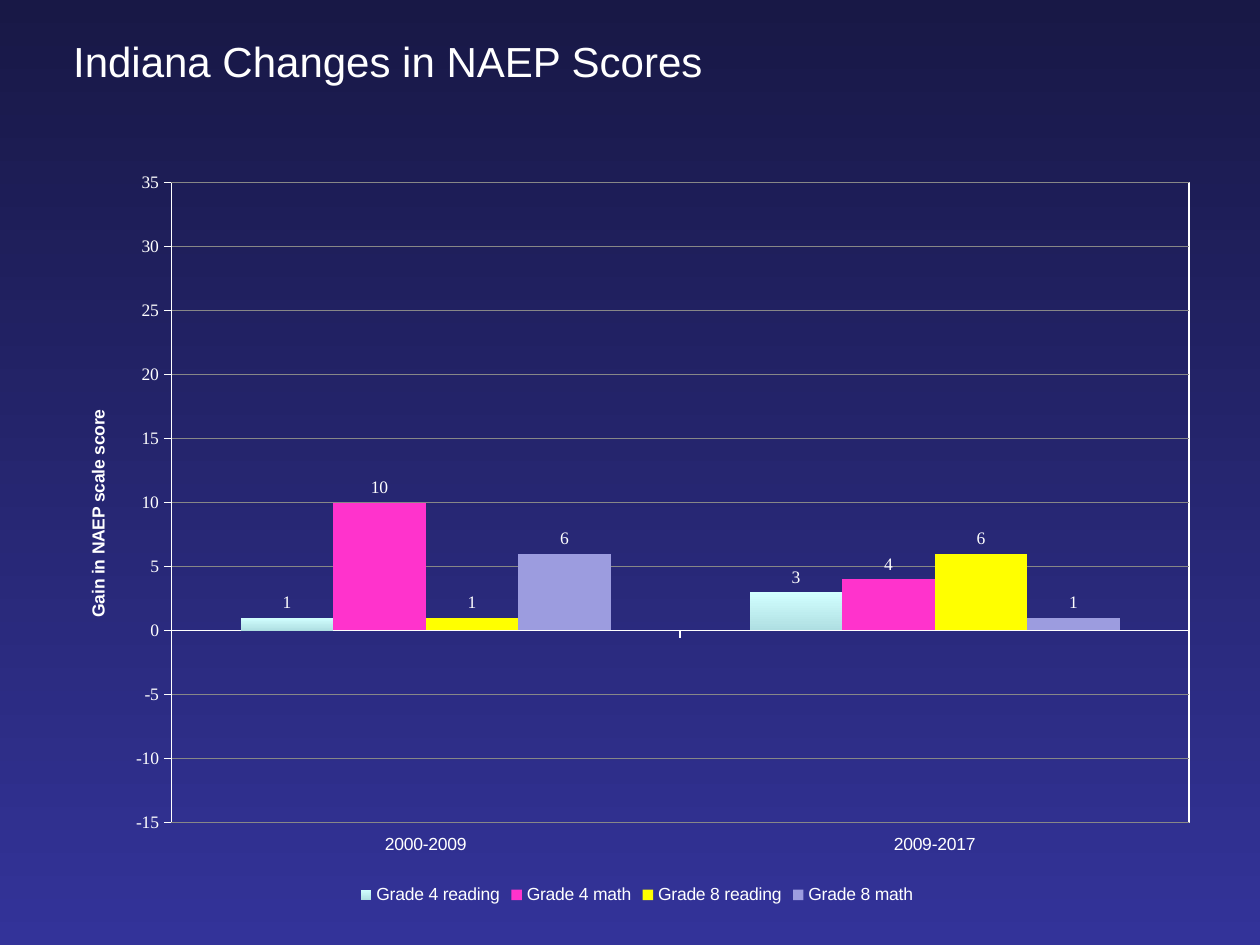
from lxml.etree import SubElement
from pptx import Presentation
from pptx.chart.data import CategoryChartData
from pptx.dml.color import RGBColor
from pptx.enum.chart import (XL_CHART_TYPE, XL_LABEL_POSITION,
                             XL_LEGEND_POSITION, XL_TICK_LABEL_POSITION,
                             XL_TICK_MARK)
from pptx.enum.text import MSO_ANCHOR, MSO_AUTO_SIZE, PP_ALIGN
from pptx.oxml import parse_xml
from pptx.oxml.ns import nsdecls, qn
from pptx.util import Cm, Pt

COLORS = {
    "sky": "181846",
    "ground": "333399",
    "text": "FFFFFF",
    "grid": "878787",
    "reading4_top": "D2FFFF",
    "reading4_bottom": "AFDFE2",
    "math4": "FF33CC",
    "reading8": "FFFF00",
    "math8": "9C9CDF",
}
PERIODS = ["2000-2009", "2009-2017"]
GAINS = [
    ("Grade 4 reading", (1, 3), ("reading4_top", "reading4_bottom")),
    ("Grade 4 math", (10, 4), ("math4",)),
    ("Grade 8 reading", (1, 6), ("reading8",)),
    ("Grade 8 math", (6, 1), ("math8",)),
]
TITLE_BOX = (Cm(1.22), Cm(0.58), Cm(13.82), Cm(1.27))
CHART_BOX = (Cm(1.22), Cm(3.2), Cm(23.24), Cm(15.14))


def rgb(name):
    return RGBColor.from_string(COLORS[name])


def apply_format(target, values):
    for attribute, value in values.items():
        setattr(target, attribute, value)


def format_font(font, name="Arial", size=10, bold=False):
    apply_format(font, {"name": name, "size": Pt(size), "bold": bold})
    font.color.rgb = rgb("text")


def format_line(line, color, width=0.75):
    line.color.rgb = rgb(color)
    line.width = Pt(width)


def format_fill(fill, names):
    if len(names) == 1:
        fill.solid()
        fill.fore_color.rgb = rgb(names[0])
        return
    fill.gradient()
    fill.gradient_angle = 270
    for stop, name, position in zip(fill.gradient_stops, names, (0, 1)):
        stop.color.rgb = rgb(name)
        stop.position = position


def set_layout(element, **fractions):
    layout = element.find(qn("c:layout"))
    if layout is None:
        layout = parse_xml(f"<c:layout {nsdecls('c')}/>")
        first = element[0]
        if first.tag in (qn("c:tx"), qn("c:legendPos")):
            first.addnext(layout)
        else:
            element.insert(0, layout)
    for child in list(layout):
        layout.remove(child)
    manual = SubElement(layout, qn("c:manualLayout"))
    if element.tag == qn("c:plotArea"):
        SubElement(manual, qn("c:layoutTarget")).set("val", "inner")
    for side in ("x", "y"):
        SubElement(manual, qn(f"c:{side}Mode")).set("val", "edge")
    for side, fraction in fractions.items():
        SubElement(manual, qn(f"c:{side}")).set("val", str(fraction))


def place_title(slide, box):
    title = slide.shapes.title
    apply_format(title, dict(zip(("left", "top", "width", "height"), box)))
    frame = title.text_frame
    frame.text = "Indiana Changes in NAEP Scores"
    apply_format(frame, {"word_wrap": False,
                         "auto_size": MSO_AUTO_SIZE.SHAPE_TO_FIT_TEXT,
                         "vertical_anchor": MSO_ANCHOR.TOP})
    paragraph = frame.paragraphs[0]
    paragraph.alignment = PP_ALIGN.LEFT
    format_font(paragraph.runs[0].font, size=24)


def format_axes(chart):
    periods, scores = chart.category_axis, chart.value_axis
    apply_format(scores, {"minimum_scale": -15, "maximum_scale": 35,
                          "major_unit": 5, "has_major_gridlines": True})
    periods.tick_label_position = XL_TICK_LABEL_POSITION.LOW
    for axis, font_name in ((periods, "Arial"), (scores, "Times New Roman")):
        apply_format(axis, {"major_tick_mark": XL_TICK_MARK.OUTSIDE,
                            "minor_tick_mark": XL_TICK_MARK.NONE})
        format_line(axis.format.line, "text")
        format_font(axis.tick_labels.font, font_name)
    format_line(scores.major_gridlines.format.line, "grid")
    caption = scores.axis_title
    caption.text_frame.text = "Gain in NAEP scale score"
    format_font(caption.text_frame.paragraphs[0].runs[0].font, bold=True)
    set_layout(caption._element, x=0.02, y=0.33)


def place_chart(slide, box):
    data = CategoryChartData()
    data.categories = PERIODS
    for name, values, _ in GAINS:
        data.add_series(name, values)
    chart = slide.shapes.add_chart(XL_CHART_TYPE.COLUMN_CLUSTERED,
                                   *box, data).chart
    apply_format(chart, {"has_title": False, "has_legend": True})
    format_font(chart.font, "Times New Roman")
    format_axes(chart)

    plot = chart.plots[0]
    apply_format(plot, {"gap_width": 150, "overlap": 0,
                        "vary_by_categories": False})
    for grade, (_, _, fill_names) in zip(plot.series, GAINS):
        grade.invert_if_negative = False
        format_fill(grade.format.fill, fill_names)
        labels = grade.data_labels
        apply_format(labels, {"show_value": True,
                              "position": XL_LABEL_POSITION.OUTSIDE_END})
        format_font(labels.font, "Times New Roman")

    legend = chart.legend
    apply_format(legend, {"position": XL_LEGEND_POSITION.BOTTOM,
                          "include_in_layout": False})
    format_font(legend.font)

    plot_area = chart._chartSpace.chart.plotArea
    set_layout(plot_area, x=0.096, y=0.032, w=0.883, h=0.852)
    plot_area.append(parse_xml(
        f'<c:spPr {nsdecls("c", "a")}><a:noFill/><a:ln w="{Pt(0.75)}">'
        f'<a:solidFill><a:srgbClr val="{COLORS["text"]}"/></a:solidFill>'
        '</a:ln></c:spPr>'))


def main():
    presentation = Presentation()
    apply_format(presentation, {"slide_width": Cm(25.4),
                                "slide_height": Cm(19.05)})
    slide = presentation.slides.add_slide(presentation.slide_layouts[5])
    format_fill(slide.background.fill, ("sky", "ground"))
    place_chart(slide, CHART_BOX)
    place_title(slide, TITLE_BOX)
    presentation.save("out.pptx")


if __name__ == "__main__":
    main()
